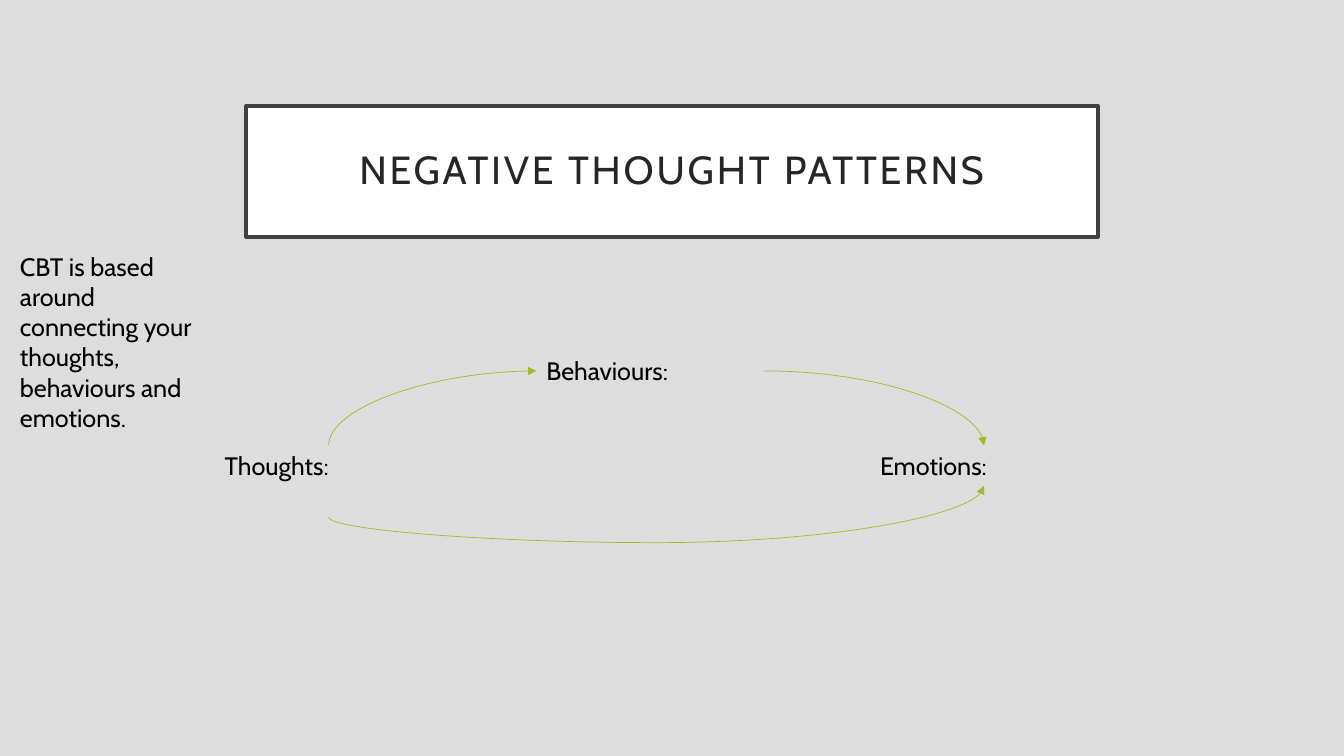
from pptx import Presentation
from pptx import util as u
from pptx.dml.color import RGBColor
from pptx.enum import shapes, text
from pptx.oxml import parse_xml
from pptx.oxml.ns import nsdecls, qn

FONT = "Cabin"
TOP, LEFT, BOTTOM, RIGHT = range(4)  # connection sites of a box


def colour(value):
    return RGBColor.from_string(value)


def write(box, words, size=18, ink="000000", align=text.PP_ALIGN.LEFT,
          anchor=text.MSO_ANCHOR.TOP, inset=None, line_spacing=None, tracking=None):
    frame = box.text_frame
    frame.word_wrap = True
    frame.auto_size = text.MSO_AUTO_SIZE.NONE
    frame.vertical_anchor = anchor
    if inset is not None:
        frame.margin_left = frame.margin_right = u.Inches(inset)
        frame.margin_top = frame.margin_bottom = u.Inches(inset)
    para = frame.paragraphs[0]
    para.alignment = align
    para.line_spacing = line_spacing
    span = para.add_run()
    span.text = words
    span.font.name = FONT
    span.font.size = u.Pt(size)
    span.font.color.rgb = colour(ink)
    if tracking is not None:
        span.font._element.set("spc", str(int(tracking * 100)))


def add_title(page, left, top, width, height):
    title = page.shapes.title
    title.left, title.top = u.Inches(left), u.Inches(top)
    title.width, title.height = u.Inches(width), u.Inches(height)
    title.fill.solid()
    title.fill.fore_color.rgb = colour("FFFFFF")
    title.line.color.rgb = colour("404040")
    title.line.width = u.Pt(2.5)
    write(title, "NEGATIVE THOUGHT PATTERNS", size=28, ink="262626",
          align=text.PP_ALIGN.CENTER, anchor=text.MSO_ANCHOR.MIDDLE,
          inset=0.2, line_spacing=0.9, tracking=2)


def add_label(page, words, left, top, width, height):
    box = page.shapes.add_textbox(*map(u.Inches, (left, top, width, height)))
    write(box, words)
    return box


def add_arrow(page, start, start_site, end, end_site, preset, turned=False, bend=None):
    """Join two boxes with a curve; a turned curve leaves its box vertically."""
    arrow = page.shapes.add_connector(shapes.MSO_CONNECTOR.CURVE, 0, 0, 0, 0)
    arrow.begin_connect(start, start_site)
    arrow.end_connect(end, end_site)
    arrow.line.color.rgb = colour("A6B727")
    arrow.line.width = u.Pt(0.5)
    properties = arrow._element.spPr
    if turned:
        width, height = arrow.width, arrow.height
        arrow.left += (width - height) // 2
        arrow.top += (height - width) // 2
        arrow.width, arrow.height = height, width
        frame = properties.find(qn("a:xfrm"))
        for name, value in (("rot", "5400000"), ("flipH", "1"), ("flipV", "1")):
            frame.set(name, value)
    geometry = properties.find(qn("a:prstGeom"))
    geometry.set("prst", preset)
    if bend is not None:
        geometry.find(qn("a:avLst")).append(parse_xml(
            f'<a:gd {nsdecls("a")} name="adj1" fmla="val {round(bend * 100000)}"/>'))
    properties.find(qn("a:ln")).append(
        parse_xml(f'<a:tailEnd {nsdecls("a")} type="triangle"/>'))
    properties.append(parse_xml(f'<a:effectLst {nsdecls("a")}/>'))


def add_cycle(page, left, top):
    """Place the three linked labels, with the upper left corner at left, top."""
    width, height, drop = 2.26, 0.4, 0.94
    behaviours = add_label(page, "Behaviours:", left + 3.19, top, width, height)
    thoughts = add_label(page, "Thoughts:", left, top + drop, width, 0.71)
    emotions = add_label(page, "Emotions:", left + 6.5, top + drop, width, height)
    add_arrow(page, thoughts, TOP, behaviours, LEFT, "curvedConnector2", turned=True)
    add_arrow(page, behaviours, RIGHT, emotions, TOP, "curvedConnector2")
    add_arrow(page, thoughts, BOTTOM, emotions, BOTTOM, "curvedConnector3",
              turned=True, bend=-0.82)


def main():
    deck = Presentation()
    deck.slide_width, deck.slide_height = u.Inches(13.33), u.Inches(7.5)
    page = deck.slides.add_slide(deck.slide_layouts[5])
    page.background.fill.solid()
    page.background.fill.fore_color.rgb = colour("DDDDDD")
    add_title(page, 2.44, 1.05, 8.45, 1.3)
    add_cycle(page, 2.13, 3.48)
    add_label(page, "CBT is based around connecting your thoughts, "
              "behaviours and emotions.", 0.1, 2.44, 2.13, 1.62)
    deck.save("out.pptx")


if __name__ == "__main__":
    main()
